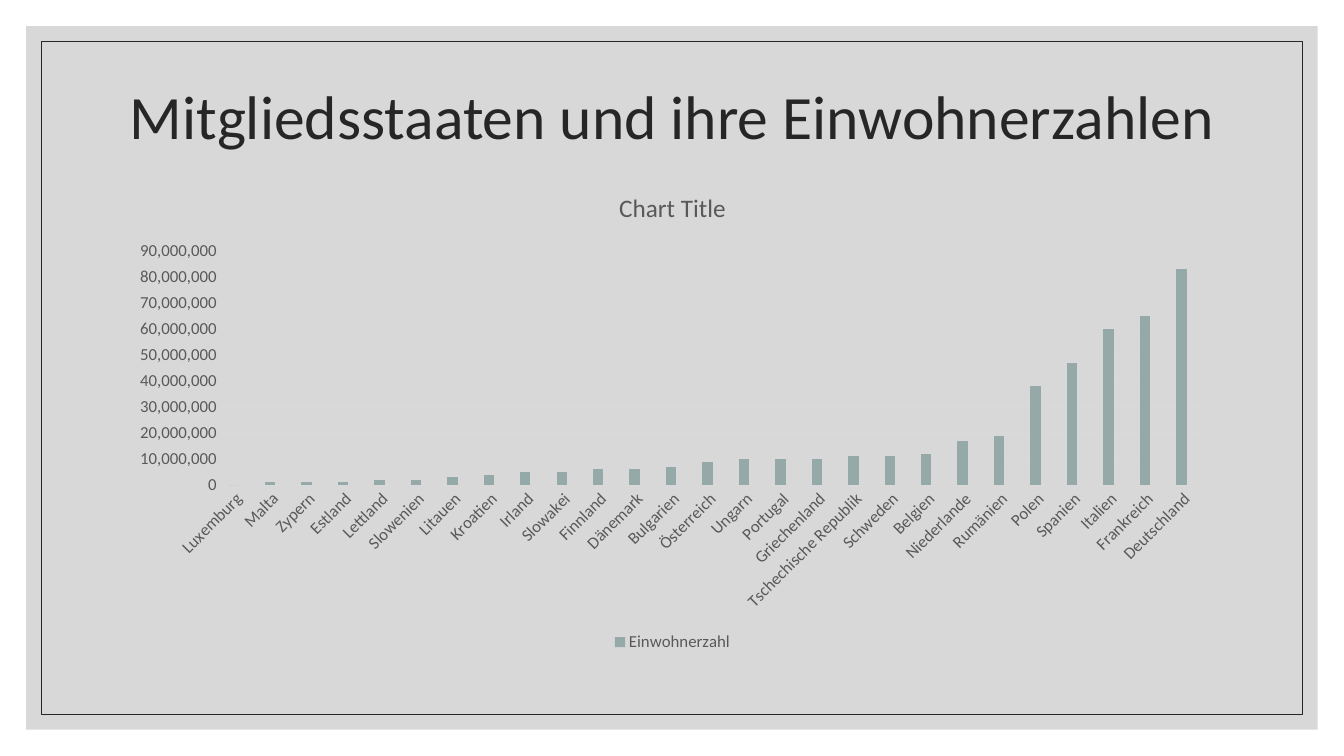
from lxml import etree
from pptx import Presentation
from pptx.chart.data import CategoryChartData
from pptx.dml.color import RGBColor
from pptx.enum.chart import XL_CHART_TYPE, XL_LEGEND_POSITION, XL_TICK_MARK
from pptx.enum.shapes import MSO_SHAPE
from pptx.enum.text import MSO_ANCHOR, PP_ALIGN
from pptx.oxml.ns import qn
from pptx.util import Inches, Pt

RECT = MSO_SHAPE.RECTANGLE
COLUMNS = XL_CHART_TYPE.COLUMN_CLUSTERED
BOTTOM = XL_LEGEND_POSITION.BOTTOM
NO_TICK = XL_TICK_MARK.NONE
CENTER, MIDDLE = PP_ALIGN.CENTER, MSO_ANCHOR.MIDDLE

# Content
TITLE = "Mitgliedsstaaten und ihre Einwohnerzahlen"
CHART_TITLE = "Chart Title"
SERIES = "Einwohnerzahl"
EMPTY_SERIES = "Series 2"
MILLION = 1_000_000
POPULATION = {  # in millions
    "Luxemburg": 0, "Malta": 1, "Zypern": 1, "Estland": 1, "Lettland": 2,
    "Slowenien": 2, "Litauen": 3, "Kroatien": 4, "Irland": 5, "Slowakei": 5,
    "Finnland": 6, "Dänemark": 6, "Bulgarien": 7, "Österreich": 9,
    "Ungarn": 10, "Portugal": 10, "Griechenland": 10,
    "Tschechische Republik": 11, "Schweden": 11, "Belgien": 12,
    "Niederlande": 17, "Rumänien": 19, "Polen": 38, "Spanien": 47,
    "Italien": 60, "Frankreich": 65, "Deutschland": 83,
}
FONT = "Calibri"
COLORS = {"panel": "BFBFBF", "ink": "262626", "label": "595959",
          "grid": "D9D9D9", "bar": "96A9A9"}
SLIDE_W, SLIDE_H = 13.33, 7.5
LEFT, WIDTH = 1.17, 11


def rgb(name):
    return RGBColor.from_string(COLORS[name])


def set_font(font, size, color):
    font.name, font.size, font.bold = FONT, Pt(size), False
    font.color.rgb = rgb(color)


def add_frame(s, margin):
    """Add a rectangle at the same distance from all slide edges."""
    sp = s.shapes.add_shape(RECT, Inches(margin), Inches(margin),
                            Inches(SLIDE_W - 2 * margin), Inches(SLIDE_H - 2 * margin))
    sp.shadow.inherit = False
    return sp


def add_background(s):
    panel = add_frame(s, 0.26)
    panel.fill.solid()
    panel.fill.fore_color.rgb = rgb("panel")
    panel.line.fill.background()
    color = panel.fill._xPr.find(".//" + qn("a:srgbClr"))
    etree.SubElement(color, qn("a:alpha")).set("val", "60000")

    border = add_frame(s, 0.41)
    border.fill.background()
    border.line.color.rgb = rgb("ink")
    border.line.width = Pt(0.5)


def add_title(s):
    tf = s.shapes.add_textbox(Inches(LEFT), Inches(0.7), Inches(WIDTH), Inches(0.98)).text_frame
    tf.word_wrap = True
    tf.vertical_anchor = MIDDLE
    p = tf.paragraphs[0]
    p.text, p.alignment, p.line_spacing = TITLE, CENTER, 0.9
    set_font(p.font, 44, "ink")


def add_population_chart(s):
    data = CategoryChartData(number_format="#,##0")
    data.categories = list(POPULATION)
    data.add_series(SERIES, [n * MILLION for n in POPULATION.values()])
    data.add_series(EMPTY_SERIES, [None] * len(POPULATION))
    chart = s.shapes.add_chart(COLUMNS, Inches(LEFT), Inches(1.69),
                               Inches(WIDTH), Inches(4.82), data).chart
    set_font(chart.font, 12, "label")

    # Chart title
    p = chart.chart_title.text_frame.paragraphs[0]
    p.text = CHART_TITLE
    set_font(p.font, 18, "label")
    chart.chart_title.include_in_layout = False

    # Bars
    plot = chart.plots[0]
    plot.gap_width, plot.overlap, plot.vary_by_categories = 150, 0, False
    bars = plot.series[0].format.fill
    bars.solid()
    bars.fore_color.rgb = rgb("bar")

    # Axes
    for axis in (chart.category_axis, chart.value_axis):
        axis.major_tick_mark = axis.minor_tick_mark = NO_TICK
        axis.format.line.fill.background()
        set_font(axis.tick_labels.font, 12, "label")
    labels = chart.category_axis._element.find(qn("c:txPr"))
    labels.find(qn("a:bodyPr")).set("rot", "-2700000")
    values = chart.value_axis
    values.minimum_scale, values.maximum_scale = 0, 90 * MILLION
    values.major_unit = 10 * MILLION
    values.tick_labels.number_format = "#,##0"
    values.tick_labels.number_format_is_linked = False
    grid = values.major_gridlines.format.line
    grid.color.rgb, grid.width = rgb("grid"), Pt(0.75)

    # Legend, without the empty series
    chart.has_legend = True
    legend = chart.legend
    legend.position, legend.include_in_layout = BOTTOM, False
    set_font(legend.font, 12, "label")
    entry = etree.Element(qn("c:legendEntry"))
    for tag in ("idx", "delete"):
        etree.SubElement(entry, qn("c:" + tag)).set("val", "1")
    legend._element.find(qn("c:legendPos")).addnext(entry)


def main():
    prs = Presentation()
    prs.slide_width, prs.slide_height = Inches(SLIDE_W), Inches(SLIDE_H)
    s = prs.slides.add_slide(prs.slide_layouts[6])
    add_background(s)
    add_title(s)
    add_population_chart(s)
    prs.save("out.pptx")


if __name__ == "__main__":
    main()
